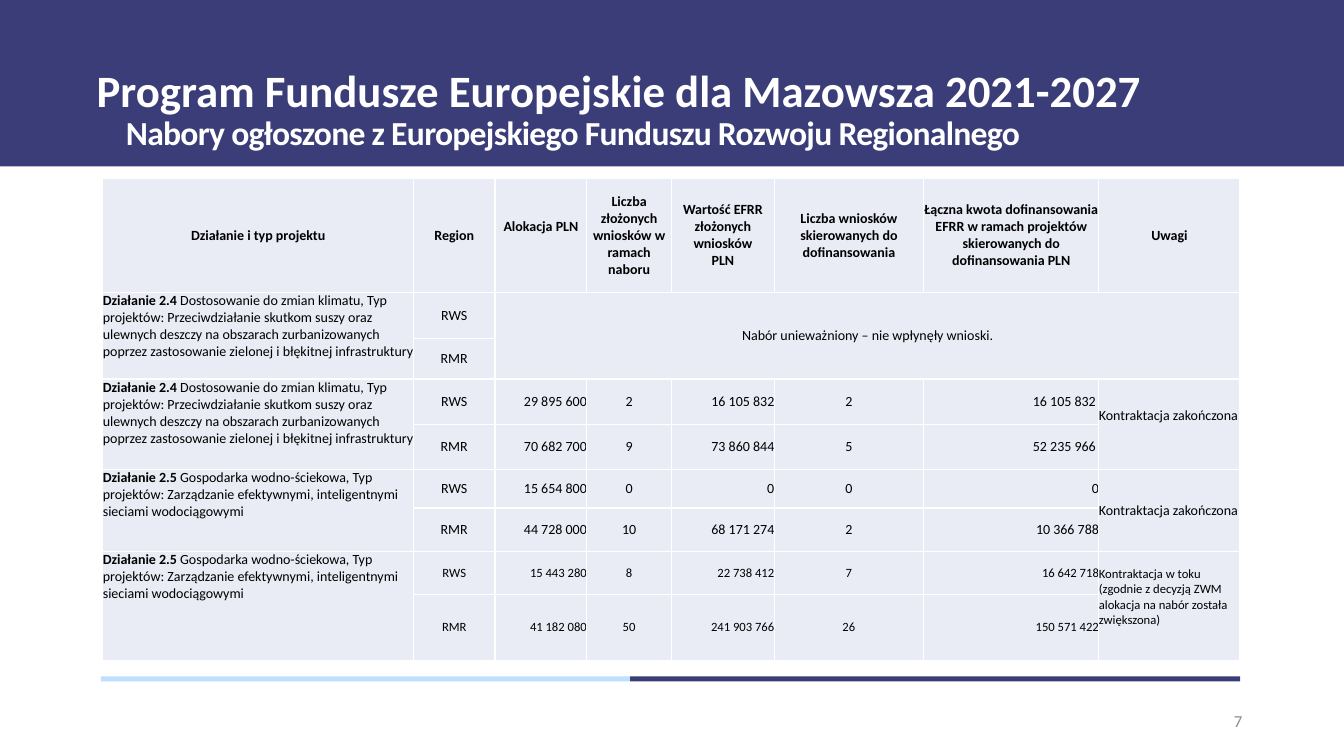
import pptx
import pptx.util
import pptx.dml.color
import pptx.enum.shapes
import pptx.enum.text
import pptx.oxml
from pptx.util import Inches

ALIGN = pptx.enum.text.PP_ALIGN
ANCHOR = pptx.enum.text.MSO_ANCHOR
NAVY, SKY, WHITE, BLACK, GRAY, CELL = "3B3D79", "BDE0FF", "FFFFFF", "000000", "8C8C8C", "E9EBF5"


def paint(color_format, color):
    color_format.rgb = pptx.dml.color.RGBColor.from_string(color)


def style(paragraph, size, color, bold=False, align=ALIGN.LEFT):
    paragraph.alignment = align
    for run in paragraph.runs:
        run.font.name = "Calibri"
        run.font.size = pptx.util.Pt(size)
        run.font.bold = bold
        paint(run.font.color, color)


presentation = pptx.Presentation()
presentation.slide_width = Inches(13.33)
presentation.slide_height = Inches(7.5)
slide = presentation.slides.add_slide(presentation.slide_layouts[6])

# Header band and the two-colour footer rule
footer_rule = slide.shapes.add_group_shape()
for shapes, left, top, width, height, color in [
    (slide.shapes, 0, 0, 13.33, 1.65, NAVY),
    (footer_rule.shapes, 1, 6.71, 5.25, 0.05, SKY),
    (footer_rule.shapes, 6.25, 6.71, 6.05, 0.05, NAVY),
]:
    shape = shapes.add_shape(pptx.enum.shapes.MSO_SHAPE.RECTANGLE,
                             Inches(left), Inches(top), Inches(width), Inches(height))
    shape.shadow.inherit = False
    shape.fill.solid()
    paint(shape.fill.fore_color, color)
    shape.line.fill.background()

# Title, subtitle and page number
for text, left, top, width, height, anchor, size, color, bold, align in [
    ("Program Fundusze Europejskie dla Mazowsza 2021-2027",
     0.86, 0.2, 11.5, 1.45, ANCHOR.MIDDLE, 32, WHITE, True, ALIGN.LEFT),
    ("Nabory ogłoszone z Europejskiego Funduszu Rozwoju Regionalnego",
     1.15, 1.06, 11.5, 0.63, ANCHOR.TOP, 24, WHITE, True, ALIGN.LEFT),
    ("7", 9.42, 6.95, 3, 0.4, ANCHOR.MIDDLE, 12, GRAY, False, ALIGN.RIGHT),
]:
    box = slide.shapes.add_textbox(Inches(left), Inches(top), Inches(width), Inches(height))
    box.text_frame.word_wrap = True
    box.text_frame.vertical_anchor = anchor
    box.text_frame.text = text
    paragraph = box.text_frame.paragraphs[0]
    style(paragraph, size, color, bold, align)
    if size == 32:
        paragraph.line_spacing = 0.9
    if size == 24:
        paragraph.runs[0].font._element.set("spc", "-50")

# Table content
climate = ("Działanie 2.4 ", "Dostosowanie do zmian klimatu, Typ projektów: Przeciwdziałanie skutkom suszy "
           "oraz ulewnych deszczy na obszarach zurbanizowanych poprzez zastosowanie zielonej "
           "i błękitnej infrastruktury")
water = ("Działanie 2.5 ", "Gospodarka wodno-ściekowa, Typ projektów: Zarządzanie efektywnymi, "
         "inteligentnymi sieciami wodociągowymi")
rows = [
    ["Działanie i typ projektu", "Region", "Alokacja PLN", "Liczba złożonych wniosków w ramach naboru",
     "Wartość EFRR złożonych wniosków\vPLN", "Liczba wniosków skierowanych do dofinansowania",
     "Łączna kwota dofinansowania EFRR w ramach projektów skierowanych do dofinansowania PLN", "Uwagi"],
    [climate, "RWS", "Nabór unieważniony – nie wpłynęły wnioski.", "", "", "", "", ""],
    ["", "RMR", "", "", "", "", "", ""],
    [climate, "RWS", "29 895 600", "2", "16 105 832", "2", "16 105 832 ", "Kontraktacja zakończona"],
    ["", "RMR", "70 682 700", "9", "73 860 844", "5", "52 235 966 ", ""],
    [water, "RWS", "15 654 800", "0", "0", "0", "0", "Kontraktacja zakończona"],
    ["", "RMR", "44 728 000", "10", "68 171 274", "2", "10 366 788", ""],
    [water, "RWS", "15 443 280", "8", "22 738 412", "7", "16 642 718",
     "Kontraktacja w toku \v(zgodnie z decyzją ZWM alokacja na nabór została zwiększona)"],
    ["", "RMR", "41 182 080", "50", "241 903 766", "26", "150 571 422", ""],
]
column_widths = [3.08, 0.81, 0.91, 0.84, 1.02, 1.48, 1.74, 1.4]
row_heights = [1.13, 0.46, 0.4, 0.45, 0.45, 0.38, 0.43, 0.43, 0.65]
column_aligns = [ALIGN.LEFT, ALIGN.CENTER, ALIGN.RIGHT, ALIGN.CENTER,
                 ALIGN.RIGHT, ALIGN.CENTER, ALIGN.RIGHT, ALIGN.LEFT]
raised_cells = {(0, 2), (3, 7), (7, 7)}  # text sits slightly above the middle

table = slide.shapes.add_table(len(rows), len(column_widths), Inches(1.02), Inches(1.77),
                               Inches(11.29), Inches(4.78)).table
table.first_row = False
table.horz_banding = False
for column, width in zip(table.columns, column_widths):
    column.width = Inches(width)
for row, height in zip(table.rows, row_heights):
    row.height = Inches(height)

# Cells: borders, fill and text
for row_index, row in enumerate(rows):
    for column_index, content in enumerate(row):
        cell = table.cell(row_index, column_index)
        cell.margin_left = cell.margin_right = cell.margin_top = 0
        cell.margin_bottom = Inches(0.17 if (row_index, column_index) in raised_cells else 0)
        for side in ("lnL", "lnR", "lnT", "lnB"):
            cell._tc.get_or_add_tcPr().append(pptx.oxml.parse_xml(
                f'<a:{side} xmlns:a="http://schemas.openxmlformats.org/drawingml/2006/main" w="12700">'
                f'<a:solidFill><a:srgbClr val="{WHITE}"/></a:solidFill></a:{side}>'))
        cell.fill.solid()
        paint(cell.fill.fore_color, CELL)
        paragraph = cell.text_frame.paragraphs[0]
        if isinstance(content, tuple):
            for part in content:
                paragraph.add_run().text = part
            style(paragraph, 10, BLACK)
            paragraph.runs[0].font.bold = True
            cell.vertical_anchor = ANCHOR.TOP
        elif content:
            paragraph.text = content
            centered = row_index in (0, 1)
            style(paragraph, 9 if row_index >= 7 else 10, BLACK, row_index == 0,
                  ALIGN.CENTER if centered else column_aligns[column_index])
            cell.vertical_anchor = ANCHOR.MIDDLE

# Merged cells
for top in (1, 3, 5, 7):
    table.cell(top, 0).merge(table.cell(top + 1, 0))
    if top > 1:
        table.cell(top, 7).merge(table.cell(top + 1, 7))
table.cell(1, 2).merge(table.cell(2, 7))

presentation.save("out.pptx")
